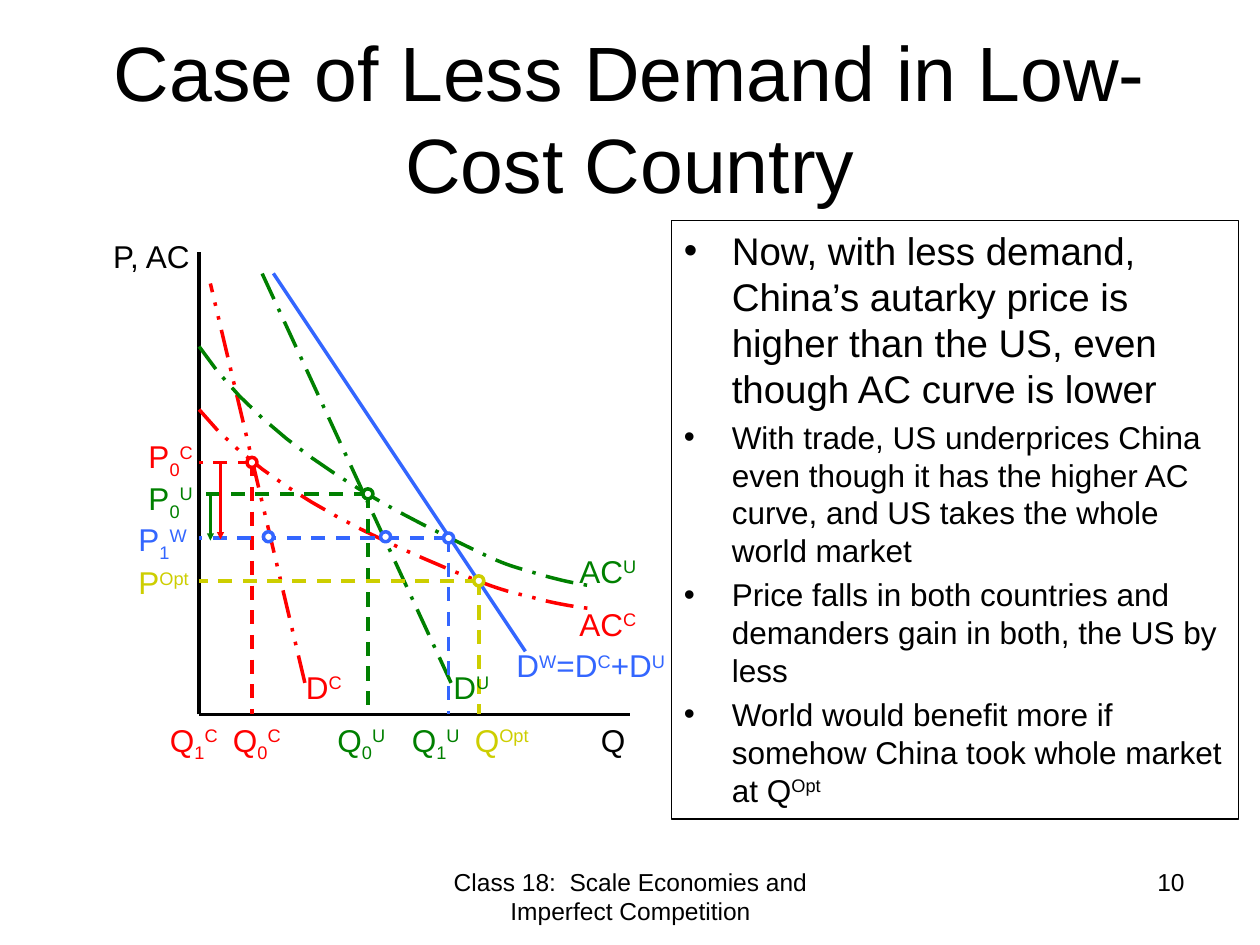
from lxml import etree
from pptx import Presentation
from pptx.dml.color import RGBColor
from pptx.enum.dml import MSO_LINE
from pptx.enum.shapes import MSO_CONNECTOR, MSO_SHAPE
from pptx.enum.text import MSO_ANCHOR, PP_ALIGN
from pptx.oxml.ns import qn
from pptx.util import Cm, Pt

BLACK = RGBColor(0x00, 0x00, 0x00)
WHITE = RGBColor(0xFF, 0xFF, 0xFF)
GREEN = RGBColor(0x00, 0x80, 0x00)
RED = RGBColor(0xFF, 0x00, 0x00)
BLUE = RGBColor(0x33, 0x66, 0xFF)
OLIVE = RGBColor(0xCD, 0xCE, 0x00)
FONT = "Arial"
SUB, SUP = -25000, 30000  # baseline shifts

# Content; positions are in inches
TITLE = "Case of Less Demand in Low-Cost Country"
FOOTER = "Class 18:  Scale Economies and Imperfect Competition"
PAGE = "10"
BULLETS = [
    (22, [("Now, with less demand, China’s autarky price is higher than the US, "
           "even though AC curve is lower", 0)]),
    (18, [("With trade, US underprices China even though it has the higher AC "
           "curve, and US takes the whole world market", 0)]),
    (18, [("Price falls in both countries and demanders gain in both, "
           "the US by less", 0)]),
    (18, [("World would benefit more if somehow China took whole market at Q", 0),
          ("Opt", SUP)]),
]

X0, Y0 = 1.58, 5.67  # origin of the diagram
AXES = [(X0, Y0, 5, Y0), (X0, Y0, X0, 2)]
DEMAND = [  # from, to, colour, dash
    (3.58, 5.42, 2.08, 2.17, GREEN, MSO_LINE.LONG_DASH_DOT),
    (2.42, 5.42, 1.67, 2.25, RED, MSO_LINE.DASH_DOT_DOT),
    (4.17, 5.17, 2.17, 2.17, BLUE, None),
]
COST_CURVES = [  # Bezier points (each third one on the curve), colour, dash
    ([(1.58, 2.75), (2.14, 3.59), (3.25, 4.11), (3.59, 4.28), (3.94, 4.45),
      (3.97, 4.47), (4.22, 4.54), (4.47, 4.62), (4.69, 4.65), (4.69, 4.65)],
     GREEN, MSO_LINE.LONG_DASH_DOT),
    ([(1.58, 3.25), (2.14, 3.95), (3.25, 4.38), (3.59, 4.53), (3.94, 4.67),
      (3.97, 4.68), (4.22, 4.74), (4.47, 4.81), (4.69, 4.83), (4.69, 4.83)],
     RED, MSO_LINE.DASH_DOT_DOT),
]
EQUILIBRIA = [(2.92, 3.92, GREEN), (2, 3.67, RED), (3.56, 4.27, BLUE),
              (3.8, 4.61, OLIVE)]
OTHER_DOTS = [(3.06, 4.26, BLUE), (2.13, 4.26, BLUE)]
PRICE_FALLS = [(1.75, 3.67, 4.28, RED), (1.67, 3.92, 4.29, GREEN)]
LABELS = [  # left, top, width, colour, runs
    (0.8, 1.83, 1.12, BLACK, [("P, AC", 0)]),
    (4.67, Y0, 0.58, BLACK, [("Q", 0)]),
    (1.25, Y0, 0.67, RED, [("Q", 0), ("1", SUB), ("C", SUP)]),
    (1.75, Y0, 0.67, RED, [("Q", 0), ("0", SUB), ("C", SUP)]),
    (2.58, Y0, 0.67, GREEN, [("Q", 0), ("0", SUB), ("U", SUP)]),
    (3.17, Y0, 0.67, GREEN, [("Q", 0), ("1", SUB), ("U", SUP)]),
    (3.67, Y0, 0.67, OLIVE, [("Q", 0), ("Opt", SUP)]),
    (1.08, 3.42, 0.58, RED, [("P", 0), ("0", SUB), ("C", SUP)]),
    (1.08, 3.75, 0.58, GREEN, [("P", 0), ("0", SUB), ("U", SUP)]),
    (1, 4.08, 0.67, BLUE, [("P", 0), ("1", SUB), ("W", SUP)]),
    (1, 4.42, 0.67, OLIVE, [("P", 0), ("Opt", SUP)]),
    (2.33, 5.25, 0.58, RED, [("D", 0), ("C", SUP)]),
    (3.5, 5.25, 0.58, GREEN, [("D", 0), ("U", SUP)]),
    (4, 5.08, 1.58, BLUE, [("D", 0), ("W", SUP), ("=D", 0), ("C", SUP),
                           ("+D", 0), ("U", SUP)]),
    (4.5, 4.33, 0.75, GREEN, [("AC", 0), ("U", SUP)]),
    (4.5, 4.75, 0.75, RED, [("AC", 0), ("C", SUP)]),
]


def cm(*inches):
    return [Cm(2.54 * v) for v in inches]


def add_runs(p, runs, size, color):
    for text, shift in runs:
        r = p.add_run()
        r.text = text
        r.font.name, r.font.size = FONT, Pt(size)
        r.font.color.rgb = color
        if shift:
            r.font._element.set("baseline", str(shift))


def add_text(s, box, runs, size, color=BLACK, align=PP_ALIGN.LEFT):
    sp = s.shapes.add_textbox(*cm(*box))
    sp.text_frame.word_wrap = True
    p = sp.text_frame.paragraphs[0]
    p.alignment = align
    add_runs(p, runs, size, color)


def style_line(line, color, dash=None, width=2):
    line.color.rgb, line.width = color, Pt(width)
    if dash:
        line.dash_style = dash


def add_line(s, x1, y1, x2, y2, color, dash=None, arrow=False):
    c = s.shapes.add_connector(MSO_CONNECTOR.STRAIGHT, *cm(x1, y1, x2, y2))
    style_line(c.line, color, dash)
    spPr = c._element.spPr
    if arrow:
        etree.SubElement(spPr.find(qn("a:ln")), qn("a:tailEnd"),
                         type="triangle", w="sm", len="sm")
    etree.SubElement(spPr, qn("a:effectLst"))


def bezier(points, steps=12):
    """Points along a chain of cubic segments."""
    yield points[0]
    for i in range(0, len(points) - 1, 3):
        for k in range(1, steps + 1):
            t = k / steps
            u = 1 - t
            weights = (u**3, 3 * u * u * t, 3 * u * t * t, t**3)
            yield tuple(sum(w * q[axis] for w, q in zip(weights, points[i:i + 4]))
                        for axis in (0, 1))


def add_curve(s, points, color, dash):
    start, *rest = [cm(*q) for q in bezier(points)]
    fb = s.shapes.build_freeform(*start)
    fb.add_line_segments(rest, close=False)
    sp = fb.convert_to_shape()
    sp.shadow.inherit = False
    sp.fill.background()
    style_line(sp.line, color, dash)


def add_dot(s, x, y, color, d=0.08):
    sp = s.shapes.add_shape(MSO_SHAPE.OVAL, *cm(x - d / 2, y - d / 2, d, d))
    sp.shadow.inherit = False
    sp.fill.solid()
    sp.fill.fore_color.rgb = WHITE
    style_line(sp.line, color)


def add_bullets(s):
    sp = s.shapes.add_textbox(*cm(5.33, 1.75, 4.5, 4.75))
    style_line(sp.line, BLACK, width=0.75)
    tf = sp.text_frame
    tf.word_wrap = True
    for i, (size, runs) in enumerate(BULLETS):
        p = tf.paragraphs[0] if i == 0 else tf.add_paragraph()
        p.space_before = Pt(size * 0.2)
        pPr = p._p.get_or_add_pPr()
        indent = cm(0.38)[0]
        pPr.set("marL", str(indent))
        pPr.set("indent", str(-indent))
        etree.SubElement(pPr, qn("a:buFont"), typeface=FONT)
        etree.SubElement(pPr, qn("a:buChar"), char="•")
        add_runs(p, runs, size, BLACK)


def main():
    prs = Presentation()
    prs.slide_width, prs.slide_height = cm(10, 7.5)
    s = prs.slides.add_slide(prs.slide_layouts[5])

    # Title
    title = s.shapes.title
    title.left, title.top, title.width, title.height = cm(0.5, 0.3, 9, 1.25)
    tf = title.text_frame
    tf.word_wrap = True
    tf.vertical_anchor = MSO_ANCHOR.MIDDLE
    tf.paragraphs[0].alignment = PP_ALIGN.CENTER
    add_runs(tf.paragraphs[0], [(TITLE, 0)], 44, BLACK)

    # Diagram: axes, curves, guides to the axes, arrows, dots, labels
    for axis in AXES:
        add_line(s, *axis, BLACK)
    for demand in DEMAND:
        add_line(s, *demand)
    for curve in COST_CURVES:
        add_curve(s, *curve)
    for x, y, color in EQUILIBRIA:
        add_line(s, x, y, X0, y, color, MSO_LINE.DASH)
        add_line(s, x, y, x, Y0, color, MSO_LINE.DASH)
    for x, top, bottom, color in PRICE_FALLS:
        add_line(s, x, top, x, bottom, color, arrow=True)
    for dot in EQUILIBRIA + OTHER_DOTS:
        add_dot(s, *dot)
    for left, top, width, color, runs in LABELS:
        add_text(s, (left, top, width, 0.4), runs, 18, color)

    # Commentary and footer
    add_bullets(s)
    add_text(s, (3.42, 6.83, 3.17, 0.52), [(FOOTER, 0)], 14, align=PP_ALIGN.CENTER)
    add_text(s, (7.17, 6.83, 2.33, 0.52), [(PAGE, 0)], 14, align=PP_ALIGN.RIGHT)

    prs.save("out.pptx")


if __name__ == "__main__":
    main()
